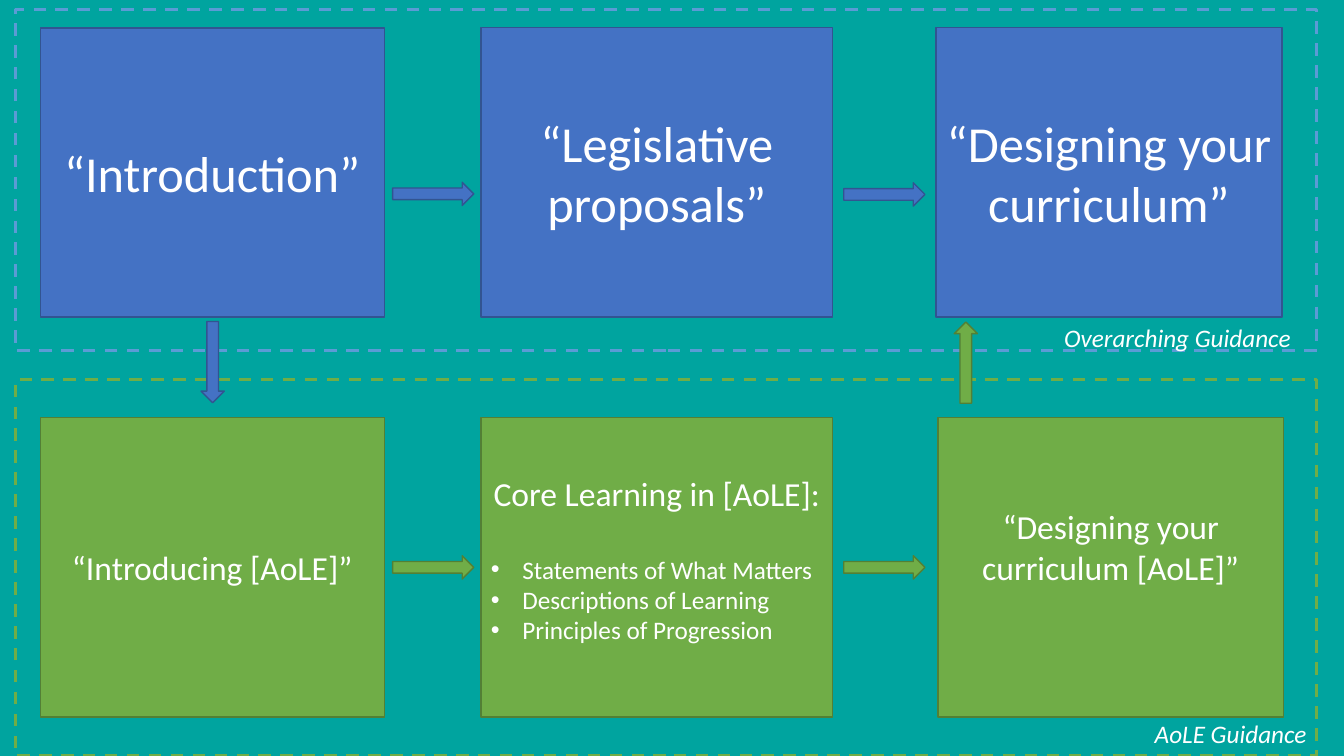
import pptx
import pptx.util
import pptx.dml.color
import pptx.enum.dml
import pptx.enum.shapes
import pptx.enum.text
import lxml.etree

Pt = pptx.util.Pt
SHAPES = pptx.enum.shapes.MSO_SHAPE
ALIGN = pptx.enum.text.PP_ALIGN
ANCHOR = pptx.enum.text.MSO_ANCHOR
BLUE, BLUE_EDGE = "4472C4", "325491"
GREEN, GREEN_EDGE = "70AD47", "538035"


def paint(color_format, color):
    color_format.rgb = pptx.dml.color.RGBColor.from_string(color)


def add_text(para, text, size, align, italic=False):
    para.alignment = align
    span = para.add_run()
    span.text = text
    span.font.name = "Calibri"
    span.font.size = Pt(size)
    span.font.italic = italic
    paint(span.font.color, "FFFFFF")


deck = pptx.Presentation()
deck.slide_width, deck.slide_height = Pt(960), Pt(540)
page = deck.slides.add_slide(deck.slide_layouts[6])
page.background.fill.solid()
paint(page.background.fill.fore_color, "00A49F")

# Guidance boxes: left, top, width, height, fill, edge, text, size, bottom inset
boxes = [
    (28.8, 20, 245.7, 206.6, BLUE, BLUE_EDGE, "“Introduction”", 36, 3.6),
    (343.5, 19.5, 251.3, 206.9, BLUE, BLUE_EDGE, "“Legislative proposals”", 36, 3.6),
    (668.7, 19.5, 247, 206.9, BLUE, BLUE_EDGE, "“Designing your curriculum”", 36, 3.6),
    (28.8, 298.3, 245.7, 213.8, GREEN, GREEN_EDGE, "“Introducing [AoLE]”", 24, 3.6),
    (343.5, 298.3, 251.3, 213.8, GREEN, GREEN_EDGE, "Core Learning in [AoLE]:", 24, 15.6),
    (669.9, 298.3, 247, 213.8, GREEN, GREEN_EDGE, "“Designing your curriculum [AoLE]”", 24, 33),
]
for left, top, width, height, fill, edge, text, size, inset in boxes:
    box = page.shapes.add_shape(SHAPES.RECTANGLE, Pt(left), Pt(top), Pt(width), Pt(height))
    box.shadow.inherit = False
    box.fill.solid()
    paint(box.fill.fore_color, fill)
    paint(box.line.color, edge)
    box.line.width = Pt(1)
    frame = box.text_frame
    frame.word_wrap = True
    frame.vertical_anchor = ANCHOR.MIDDLE
    frame.margin_bottom = Pt(inset)
    add_text(frame.paragraphs[0], text, size, ALIGN.CENTER)

    # Bullets under the core learning heading
    if text.startswith("Core Learning"):
        frame.paragraphs[0].space_after = Pt(29.3)
        for item in ("Statements of What Matters", "Descriptions of Learning",
                     "Principles of Progression"):
            para = frame.add_paragraph()
            add_text(para, item, 18, ALIGN.LEFT)
            properties = para._p.get_or_add_pPr()
            properties.set("marL", str(Pt(22.5)))
            properties.set("indent", str(-Pt(22.5)))
            namespace = "{http://schemas.openxmlformats.org/drawingml/2006/main}"
            lxml.etree.SubElement(properties, namespace + "buFont", typeface="Arial")
            lxml.etree.SubElement(properties, namespace + "buChar", char="•")

# Dashed outlines around the two rows
for top, height, color in ((270.9, 269.1, GREEN), (7, 243.4, "5B9BD5")):
    outline = page.shapes.add_shape(SHAPES.RECTANGLE, Pt(11), Pt(top), Pt(929.5), Pt(height))
    outline.shadow.inherit = False
    outline.fill.background()
    paint(outline.line.color, color)
    outline.line.width = Pt(2.25)
    outline.line.dash_style = pptx.enum.dml.MSO_LINE.DASH

# Row labels
for left, top, width, text, align in (
    (753.1, 226.4, 177.8, "Overarching Guidance", ALIGN.LEFT),
    (473.8, 509.6, 466.6, "AoLE Guidance", ALIGN.RIGHT),
):
    label = page.shapes.add_textbox(Pt(left), Pt(top), Pt(width), Pt(29))
    label.text_frame.word_wrap = True
    add_text(label.text_frame.paragraphs[0], text, 18, align, italic=True)

# Arrows: left, top, rotation, fill, edge
arrows = [
    (280.5, 130.2, 0, BLUE, BLUE_EDGE),
    (602.7, 130.6, 0, BLUE, BLUE_EDGE),
    (280.5, 397, 0, GREEN, GREEN_EDGE),
    (602.7, 397, 0, GREEN, GREEN_EDGE),
    (122.9, 250.4, 90, BLUE, BLUE_EDGE),
    (660.9, 250.7, 270, GREEN, GREEN_EDGE),
]
for left, top, rotation, fill, edge in arrows:
    arrow = page.shapes.add_shape(SHAPES.RIGHT_ARROW, Pt(left), Pt(top), Pt(58), Pt(16.6))
    arrow.rotation = rotation
    arrow.shadow.inherit = False
    arrow.fill.solid()
    paint(arrow.fill.fore_color, fill)
    paint(arrow.line.color, edge)
    arrow.line.width = Pt(1)

deck.save("out.pptx")
